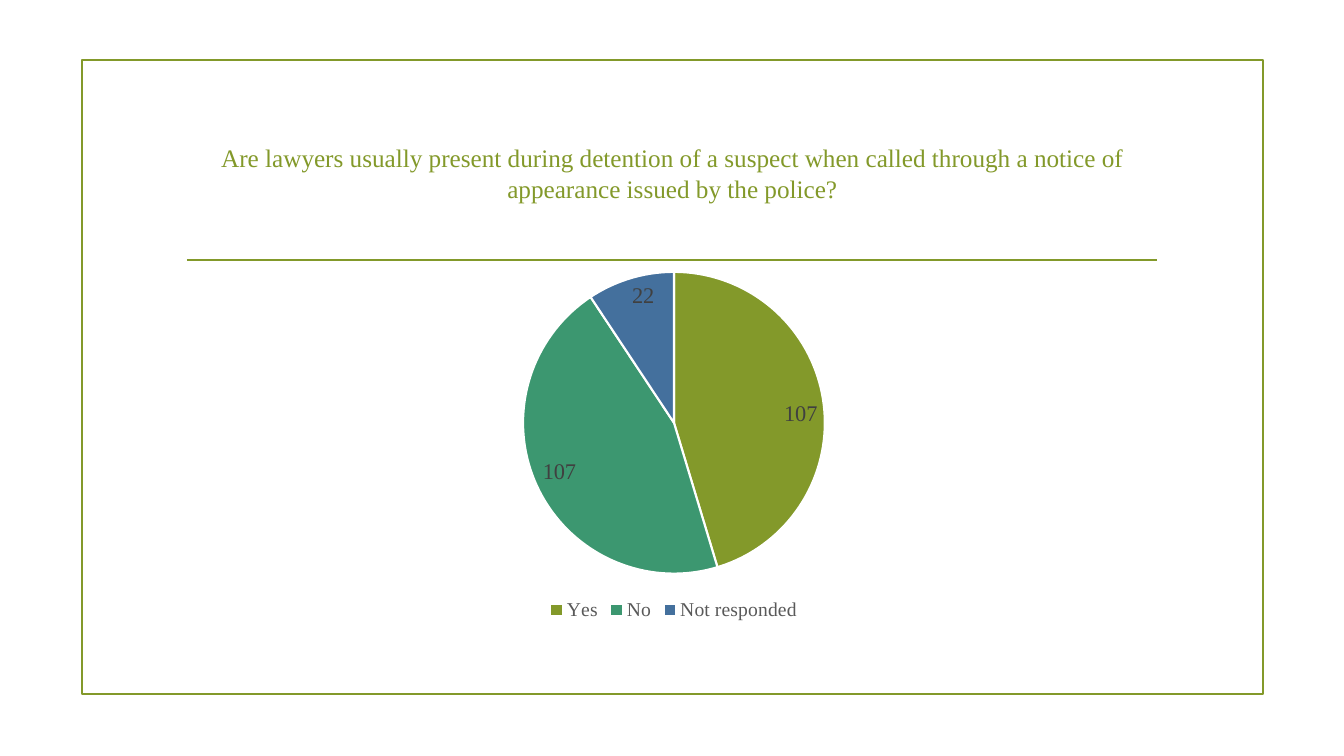
from lxml import etree
from pptx import Presentation
from pptx.chart.data import CategoryChartData
from pptx.dml.color import RGBColor
from pptx.enum.chart import XL_CHART_TYPE as ChartType
from pptx.enum.chart import XL_LABEL_POSITION as LabelPosition
from pptx.enum.chart import XL_LEGEND_POSITION as LegendPosition
from pptx.enum.shapes import MSO_CONNECTOR as Connector
from pptx.enum.shapes import MSO_SHAPE as Shape
from pptx.enum.text import MSO_ANCHOR as Anchor
from pptx.enum.text import PP_ALIGN as Align
from pptx.oxml.ns import qn
from pptx.util import Pt

EMU_PER_PX = 914400 / 100.8
FONT = "Times New Roman"
OLIVE, GREEN, BLUE = "83992A", "3C9770", "44709D"
LABEL_GREY, LEGEND_GREY, WHITE = "404040", "595959", "FFFFFF"
QUESTION = (
    "Are lawyers usually present during detention of a suspect when called "
    "through a notice of appearance issued by the police?"
)
ANSWERS = [("Yes", 107, OLIVE), ("No", 107, GREEN), ("Not responded", 22, BLUE)]


def px(*lengths):
    return [round(length * EMU_PER_PX) for length in lengths]


def color(value):
    return RGBColor.from_string(value)


def style_line(line, value, width):
    line.color.rgb = color(value)
    line.width = Pt(width)


def style_font(font, size, value):
    font.name = FONT
    font.size = Pt(size)
    font.color.rgb = color(value)


def add_frame(page, left, top, width, height):
    frame = page.shapes.add_shape(Shape.RECTANGLE, *px(left, top, width, height))
    frame.shadow.inherit = False
    frame.fill.background()
    style_line(frame.line, OLIVE, 1.25)


def add_rule(page, left, right, y):
    rule = page.shapes.add_connector(Connector.STRAIGHT, *px(left, y, right, y))
    style_line(rule.line, OLIVE, 1.25)
    etree.SubElement(rule._element.spPr, qn("a:effectLst"))


def set_title(page, text, left, top, width, height):
    title = page.shapes.title
    title.left, title.top, title.width, title.height = px(left, top, width, height)
    frame = title.text_frame
    frame.text = text
    frame.word_wrap = True
    frame.vertical_anchor = Anchor.MIDDLE
    para = frame.paragraphs[0]
    para.alignment = Align.CENTER
    style_font(para.font, 18, OLIVE)


def add_pie(page, answers, left, top, width, height):
    data = CategoryChartData()
    data.categories = [name for name, _, _ in answers]
    data.add_series("Series 1", [count for _, count, _ in answers])
    chart = page.shapes.add_chart(
        ChartType.PIE, *px(left, top, width, height), data
    ).chart
    style_font(chart.font, 10, "000000")
    chart.has_title = False
    chart.has_legend = True
    chart.legend.position = LegendPosition.BOTTOM
    chart.legend.include_in_layout = False
    style_font(chart.legend.font, 14, LEGEND_GREY)

    plot = chart.plots[0]
    plot.vary_by_categories = True
    series = plot.series[0]
    for index, (_, _, fill) in enumerate(answers):
        wedge = series.points[index].format
        wedge.fill.solid()
        wedge.fill.fore_color.rgb = color(fill)
        style_line(wedge.line, WHITE, 1.5)
    labels = series.data_labels
    labels.show_value = True
    labels.show_percentage = False
    labels.position = LabelPosition.INSIDE_END
    style_font(labels.font, 16, LABEL_GREY)


def main():
    deck = Presentation()
    deck.slide_width, deck.slide_height = px(1344, 756)
    page = deck.slides.add_slide(deck.slide_layouts[5])
    add_frame(page, 82, 60, 1181, 634)
    add_rule(page, 187, 1157, 260)
    set_title(page, QUESTION, 173, 101, 999, 144)
    add_pie(page, ANSWERS, 288, 258, 772, 367)
    deck.save("out.pptx")


if __name__ == "__main__":
    main()
